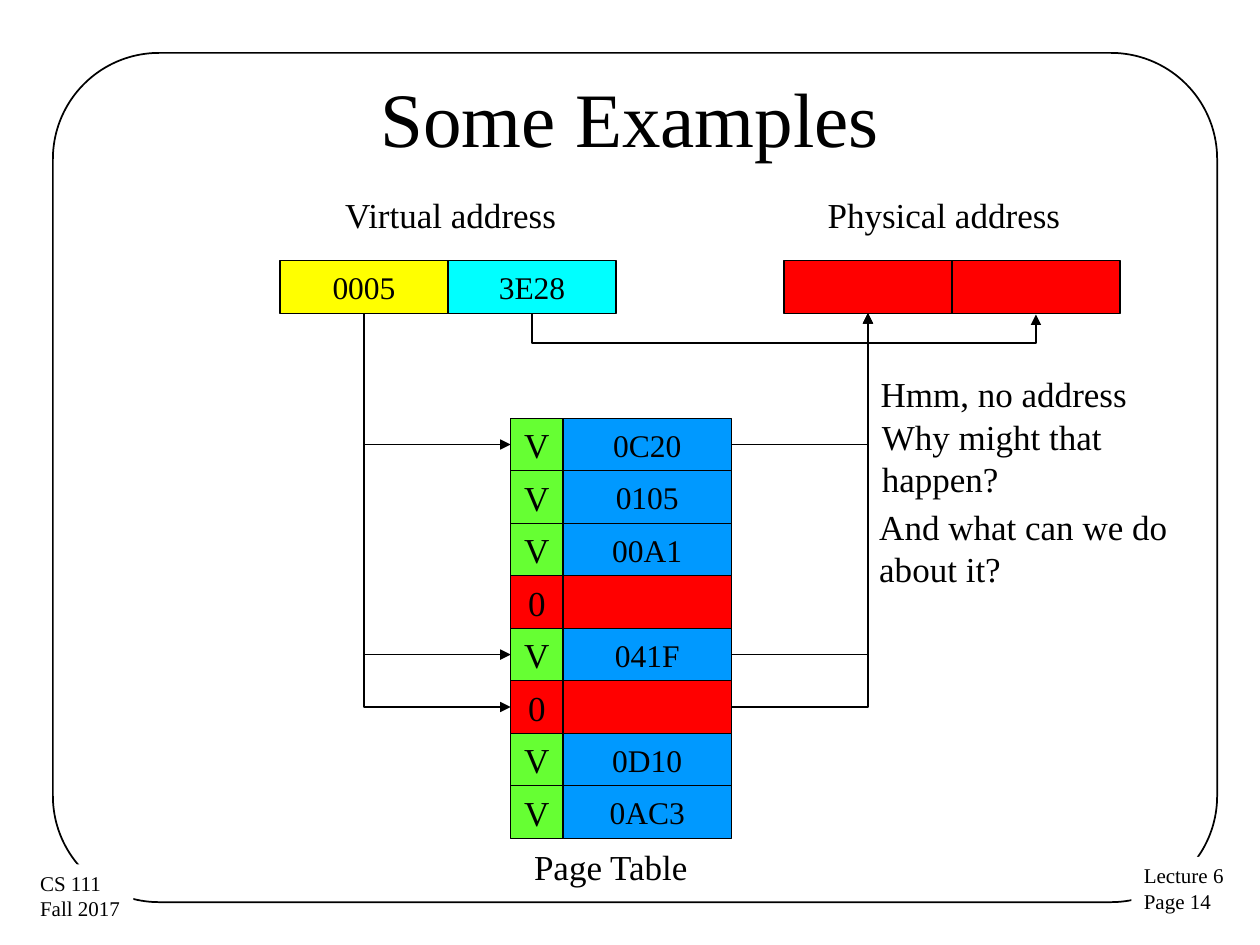
from lxml import etree
from pptx import Presentation
from pptx.dml.color import RGBColor
from pptx.enum.shapes import MSO_CONNECTOR as Connector, MSO_SHAPE as Shape
from pptx.enum.text import MSO_ANCHOR as Anchor, MSO_AUTO_SIZE as AutoSize, PP_ALIGN as Align
from pptx.oxml.ns import qn
from pptx.util import Inches, Pt

WIDTH, HEIGHT = 10, 7.5
COLUMN, ROW = WIDTH * 2 / 15, HEIGHT / 18
hex_color = RGBColor.from_string

presentation = Presentation()
presentation.slide_width, presentation.slide_height = Inches(WIDTH), Inches(HEIGHT)
slide = presentation.slides.add_slide(presentation.slide_layouts[6])


def add_box(text, left, top, width, height, *, preset=Shape.RECTANGLE, fill=None,
            line=None, size=20, align=Align.LEFT, anchor=Anchor.TOP, wrap=False, grow=False):
    place = [Inches(length) for length in (left, top, width, height)]
    if fill or line:
        shape = slide.shapes.add_shape(preset, *place)
        shape.shadow.inherit = False
    else:
        shape = slide.shapes.add_textbox(*place)
    if fill:
        shape.fill.solid()
        shape.fill.fore_color.rgb = hex_color(fill)
    else:
        shape.fill.background()
    if line:
        shape.line.color.rgb = hex_color("000000")
        shape.line.width = Pt(line)
    else:
        shape.line.fill.background()
    frame = shape.text_frame
    frame.word_wrap, frame.vertical_anchor = wrap, anchor
    if grow:
        frame.auto_size = AutoSize.SHAPE_TO_FIT_TEXT
    frame.text = text
    for paragraph in frame.paragraphs:
        paragraph.alignment = align
        paragraph.font.name, paragraph.font.size = "Times New Roman", Pt(size)
        paragraph.font.color.rgb = hex_color("000000")
    return shape


def add_wire(x1, y1, x2, y2, preset="bentConnector2", turned=False, bend=None):
    if turned:
        middle_x, middle_y = (x1 + x2) / 2, (y1 + y2) / 2
        half_width, half_height = (y2 - y1) / 2, (x2 - x1) / 2
        x1, x2 = middle_x + half_width, middle_x - half_width
        y1, y2 = middle_y - half_height, middle_y + half_height
    wire = slide.shapes.add_connector(Connector.ELBOW, *map(Inches, (x1, y1, x2, y2)))
    wire.line.color.rgb = hex_color("000000")
    wire.line.width = Pt(0.75)
    properties = wire.element.spPr
    if turned:
        properties.find(qn("a:xfrm")).set("rot", str(270 * 60000))
    geometry = properties.find(qn("a:prstGeom"))
    geometry.set("prst", preset)
    if bend:
        guide = etree.SubElement(geometry.find(qn("a:avLst")), qn("a:gd"))
        guide.set("name", "adj1")
        guide.set("fmla", f"val {bend * 100000}")
    etree.SubElement(properties.find(qn("a:ln")), qn("a:tailEnd")).set("type", "triangle")
    etree.SubElement(properties, qn("a:effectLst"))


border = add_box("", 0.42, 0.42, 9.24, 6.74, preset=Shape.ROUNDED_RECTANGLE, line=1)
border.adjustments[0] = 0.125
add_box("Lecture 6\nPage 14", 8.98, 6.8, 0.84, 0.51, fill="FFFFFF", size=12, grow=True)
add_box("CS 111\nFall 2017", 0.22, 6.86, 0.84, 0.51, fill="FFFFFF", size=12, grow=True)
add_box("Some Examples", 0.5, 0.3, 9, 1.25, size=44, align=Align.CENTER,
        anchor=Anchor.MIDDLE, wrap=True)

cell_style = {"line": 0.75, "align": Align.CENTER, "anchor": Anchor.MIDDLE}
address_top, virtual_left, physical_left = 2.07, COLUMN * 5 / 3, COLUMN * 14 / 3
address_bottom = address_top + ROW
addresses = [
    (virtual_left, [("0005", "FFFF00"), ("3E28", "00FFFF")]),
    (physical_left, [("", "FF0000"), ("", "FF0000")]),
]
for left, parts in addresses:
    for index, (text, fill) in enumerate(parts):
        add_box(text, left + index * COLUMN, address_top, COLUMN, ROW,
                fill=fill, size=18, **cell_style)

frame_left, table_top = 4.47, address_top + 3 * ROW
valid_left, frame_right = frame_left - ROW, frame_left + COLUMN
frames = ["0C20", "0105", "00A1", "", "041F", "", "0D10", "0AC3"]
for index, page_frame in enumerate(frames):
    top = table_top + index * ROW
    valid_fill, frame_fill = ("66FF33", "0099FF") if page_frame else ("FF0000", "FF0000")
    add_box(page_frame, frame_left, top, COLUMN, ROW, fill=frame_fill, size=18, **cell_style)
    add_box("V" if page_frame else "0", valid_left, top, ROW, ROW, fill=valid_fill, **cell_style)

page_x, physical_x = virtual_left + COLUMN / 2, physical_left + COLUMN / 2
add_wire(page_x + COLUMN, address_bottom, physical_x + COLUMN, address_bottom + 0.01,
         preset="bentConnector3", turned=True, bend=24)
for index in (4, 0, 5):
    entry_y = table_top + (index + 0.5) * ROW
    add_wire(page_x, address_bottom, valid_left, entry_y, turned=True)
    add_wire(frame_right, entry_y, physical_x, address_bottom)

labels = [
    ("Virtual address", 2.64, 1.49, 1.91, 0.44, False),
    ("Physical address", 6.47, 1.49, 2.06, 0.44, False),
    ("Page Table", 4.14, 6.66, 1.44, 0.44, False),
    ("Hmm, no address", 6.89, 2.91, 2.17, 0.44, False),
    ("Why might that happen?", 6.9, 3.25, 2.6, 0.77, True),
    ("And what can we do about it?", 6.88, 3.96, 2.6, 0.77, True),
]
for text, left, top, width, height, wrap in labels:
    add_box(text, left, top, width, height, wrap=wrap, grow=True)

presentation.save("out.pptx")
